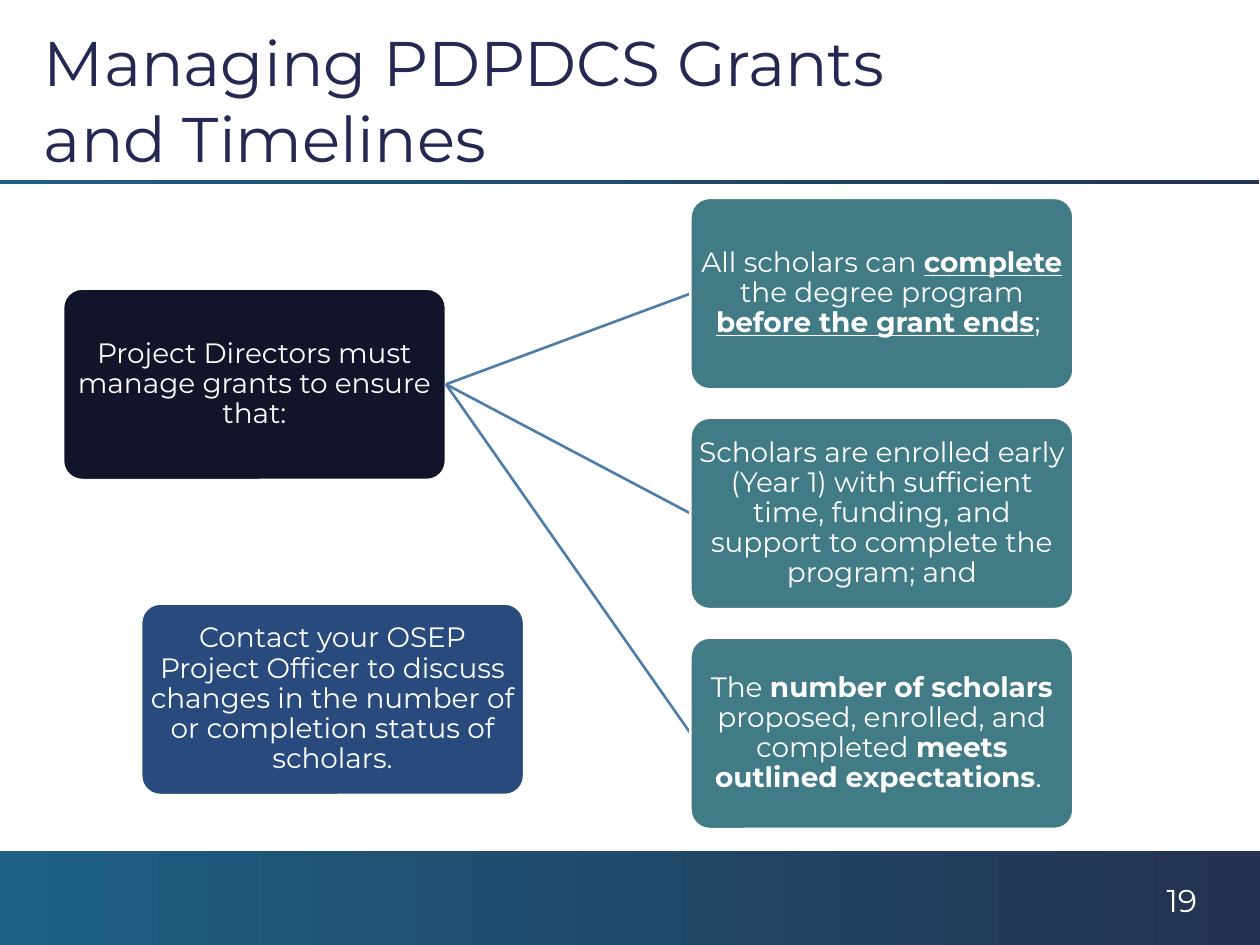
import pptx
import pptx.util
import pptx.dml.color
import pptx.enum.shapes
import pptx.enum.text
import lxml.etree

Inches, Pt = pptx.util.Inches, pptx.util.Pt
SHAPE = pptx.enum.shapes.MSO_SHAPE
ALIGN = pptx.enum.text.PP_ALIGN
ANCHOR = pptx.enum.text.MSO_ANCHOR

COLORS = {
    "title": "242852", "white": "FFFFFF", "line": "4E7EA7",
    "grad_start": "1E6083", "grad_end": "243352",
    "root": "121429", "goal": "417B85", "contact": "294A7C",
}
FONT = "Montserrat"
BOX_W, BOX_H = 3.04, 1.52
GOAL_X, GOAL_Y, GOAL_STEP = 5.48, 1.57, 1.745

BOLD = {"bold": True}
STRESSED = {"bold": True, "underline": True}
GOALS = [
    [("All scholars can ", {}), ("complete", STRESSED),
     (" the degree program ", {}), ("before the grant ends", STRESSED), ("; ", {})],
    [("Scholars are enrolled early (Year 1) with sufficient time, funding, "
      "and support to complete the program; and", {})],
    [("The ", {}), ("number of scholars ", BOLD),
     ("proposed, enrolled, and completed ", {}),
     ("meets outlined expectations", BOLD), (". ", {})],
]


def rgb(name):
    return pptx.dml.color.RGBColor.from_string(COLORS[name])


def set_attrs(obj, values):
    for name, value in values.items():
        setattr(obj, name, value)


def write(tf, runs, size, color, frame=None, para=None):
    set_attrs(tf, {"word_wrap": True, **(frame or {})})
    p = tf.paragraphs[0]
    set_attrs(p, para or {})
    for text, style in runs:
        for i, line in enumerate(text.split("\n")):
            if i:
                p.add_line_break()
            r = p.add_run()
            r.text = line
            set_attrs(r.font, {"name": FONT, "size": Pt(size), **style})
            r.font.color.rgb = rgb(color)


def add_text(s, at, text, size, color, frame=None, para=None):
    sp = s.shapes.add_textbox(*map(Inches, at))
    write(sp.text_frame, [(text, {})], size, color, frame, para)


def add_band(s, *at):
    sp = s.shapes.add_shape(SHAPE.RECTANGLE, *map(Inches, at))
    sp.shadow.inherit = False
    sp.line.fill.background()
    sp.fill.gradient()
    sp.fill.gradient_angle = 0
    for stop, name in zip(sp.fill.gradient_stops, ("grad_start", "grad_end")):
        stop.color.rgb = rgb(name)


def add_box(s, x, y, fill, runs):
    sp = s.shapes.add_shape(SHAPE.ROUNDED_RECTANGLE,
                            *map(Inches, (x, y, BOX_W, BOX_H)))
    sp.adjustments[0] = 0.1
    sp.shadow.inherit = False
    sp.fill.solid()
    sp.fill.fore_color.rgb = rgb(fill)
    sp.line.color.rgb = rgb("white")
    sp.line.width = Pt(1.5)
    frame = {f"margin_{side}": Inches(0.01)
             for side in ("left", "top", "right", "bottom")}
    frame["vertical_anchor"] = ANCHOR.MIDDLE
    write(sp.text_frame, runs, 16, "white", frame,
          {"alignment": ALIGN.CENTER, "line_spacing": 0.9})
    return sp


def add_line(s):
    line = s.shapes.add_connector(pptx.enum.shapes.MSO_CONNECTOR.STRAIGHT, 0, 0, 0, 0)
    line.line.color.rgb = rgb("line")
    line.line.width = Pt(1.5)
    lxml.etree.SubElement(line._element.spPr, pptx.oxml.ns.qn("a:effectLst"))
    return line


def main():
    prs = pptx.Presentation()
    prs.slide_width, prs.slide_height = Inches(10), Inches(7.5)
    s = prs.slides.add_slide(prs.slide_layouts[6])

    # Footer band and rule under the title
    add_band(s, 0, 6.75, 10, 0.75)
    add_band(s, -0.01, 1.43, 10, 0.03)

    # Title
    add_text(s, (0.25, 0.25, 9.49, 1.08), "Managing PDPDCS Grants \nand Timelines",
             36, "title", {"vertical_anchor": ANCHOR.MIDDLE})

    # Root box with a line to each goal; lines lie behind the goal boxes
    root = add_box(s, 0.5, 2.29, "root",
                   [("Project Directors must manage grants to ensure that:", {})])
    for i, runs in enumerate(GOALS):
        line = add_line(s)
        goal = add_box(s, GOAL_X, GOAL_Y + i * GOAL_STEP, "goal", runs)
        line.begin_connect(root, 3)
        line.end_connect(goal, 1)

    # Contact advice
    add_box(s, 1.12, 4.79, "contact",
            [("Contact your OSEP Project Officer to discuss changes in the "
              "number of or completion status of scholars.", {})])

    # Slide number
    add_text(s, (9.16, 7, 0.58, 0.27), "19", 18, "white", para={"line_spacing": 0.8})

    prs.save("out.pptx")


if __name__ == "__main__":
    main()
